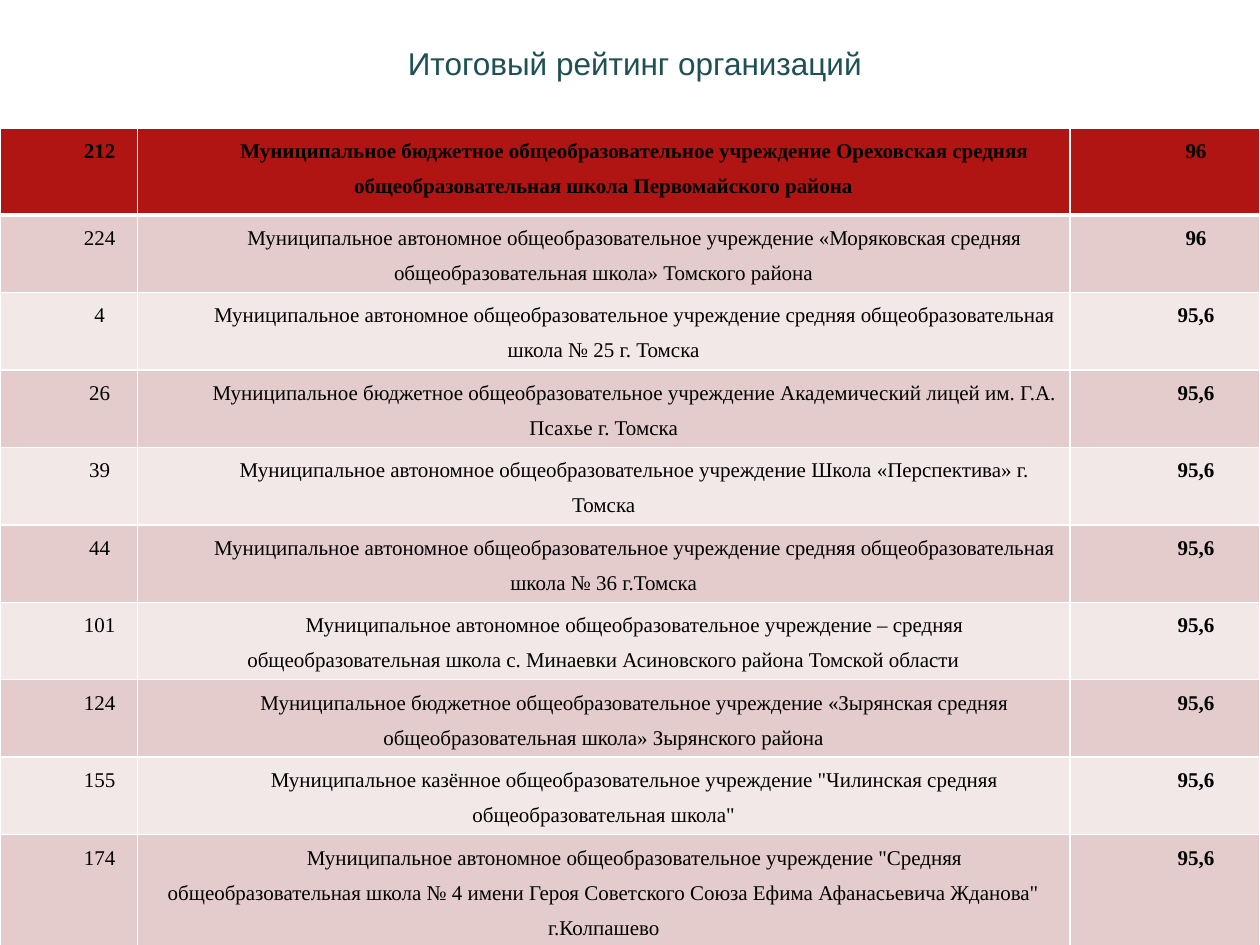
from dataclasses import dataclass

from lxml.etree import SubElement
from pptx import Presentation
from pptx.dml.color import RGBColor
from pptx.enum.text import MSO_ANCHOR, MSO_AUTO_SIZE, PP_ALIGN
from pptx.oxml.ns import qn
from pptx.util import Pt


@dataclass(frozen=True)
class Theme:
    title: str = "1E5155"
    text: str = "000000"
    header: str = "B01513"
    bands: tuple = ("E4CCCC", "F2E8E7")
    border: str = "FFFFFF"
    title_font: str = "Arial"
    table_font: str = "Times New Roman"
    title_size: float = 18
    table_size: float = 12


@dataclass(frozen=True)
class School:
    number: str
    name: str
    score: str = "95,6"
    height: float = 44.3


THEME = Theme()
COLUMN_WIDTHS = (78.5, 533, 108.5)
SCHOOLS = (
    School("212", "Муниципальное бюджетное общеобразовательное учреждение Ореховская средняя "
           "общеобразовательная школа Первомайского района", "96", 49.4),
    School("224", "Муниципальное автономное общеобразовательное учреждение «Моряковская средняя "
           "общеобразовательная школа» Томского района", "96"),
    School("4", "Муниципальное автономное общеобразовательное учреждение средняя "
           "общеобразовательная школа № 25 г. Томска"),
    School("26", "Муниципальное бюджетное общеобразовательное учреждение Академический лицей "
           "им. Г.А. Псахье г. Томска"),
    School("39", "Муниципальное автономное общеобразовательное учреждение Школа "
           "«Перспектива» г. Томска"),
    School("44", "Муниципальное автономное общеобразовательное учреждение средняя "
           "общеобразовательная школа № 36 г.Томска"),
    School("101", "Муниципальное автономное общеобразовательное учреждение – средняя "
           "общеобразовательная школа с. Минаевки Асиновского района Томской области"),
    School("124", "Муниципальное бюджетное общеобразовательное учреждение «Зырянская средняя "
           "общеобразовательная школа» Зырянского района"),
    School("155", "Муниципальное казённое общеобразовательное учреждение \"Чилинская средняя "
           "общеобразовательная школа\""),
    School("174", "Муниципальное автономное общеобразовательное учреждение \"Средняя "
           "общеобразовательная школа № 4 имени Героя Советского Союза Ефима Афанасьевича "
           "Жданова\" г.Колпашево", height=74),
)


def write(tf, text: str, *, font: str, size: float, color: str, bold: bool = False,
          spacing: float = 1, indent: float = 0) -> None:
    """Put one centred paragraph into a text frame."""
    p = tf.paragraphs[0]
    p.alignment = PP_ALIGN.CENTER
    p.line_spacing = spacing
    p.space_before = Pt(0)
    if indent:
        pPr = p._p.get_or_add_pPr()
        pPr.set("marL", "0")
        pPr.set("indent", str(Pt(indent)))
    r = p.add_run()
    r.text = text
    r.font.name = font
    r.font.size = Pt(size)
    r.font.bold = bold
    r.font.color.rgb = RGBColor.from_string(color)


def set_borders(cell, color: str, bottom: float) -> None:
    """Draw the four cell edges; borders come before the fill in the XML."""
    tcPr = cell._tc.get_or_add_tcPr()
    widths = {"a:lnL": 1, "a:lnR": 1, "a:lnT": 1, "a:lnB": bottom}
    for i, (tag, width) in enumerate(widths.items()):
        ln = SubElement(tcPr, qn(tag), w=str(Pt(width)))
        fill = SubElement(ln, qn("a:solidFill"))
        SubElement(fill, qn("a:srgbClr"), val=color)
        tcPr.insert(i, ln)


def add_title(s, text: str) -> None:
    sp = s.shapes.title
    sp.left, sp.top, sp.width, sp.height = Pt(36), Pt(21.6), Pt(648), Pt(90)
    tf = sp.text_frame
    tf.auto_size = MSO_AUTO_SIZE.NONE
    tf.vertical_anchor = MSO_ANCHOR.TOP
    tf.margin_left = Pt(12.8)
    write(tf, text, font=THEME.title_font, size=THEME.title_size, color=THEME.title)


def add_rating(s, schools: tuple) -> None:
    height = sum(school.height for school in schools)
    table = s.shapes.add_table(len(schools), len(COLUMN_WIDTHS), Pt(0), Pt(73.4),
                               Pt(sum(COLUMN_WIDTHS)), Pt(height)).table
    for column, width in zip(table.columns, COLUMN_WIDTHS):
        column.width = Pt(width)
    for i, school in enumerate(schools):
        table.rows[i].height = Pt(school.height)
        is_header = i == 0
        fill = THEME.header if is_header else THEME.bands[(i - 1) % 2]
        for j, text in enumerate((school.number, school.name, school.score)):
            cell = table.cell(i, j)
            cell.margin_left = cell.margin_right = Pt(5)
            cell.margin_top = cell.margin_bottom = Pt(0)
            cell.fill.solid()
            cell.fill.fore_color.rgb = RGBColor.from_string(fill)
            set_borders(cell, THEME.border, bottom=3 if is_header else 1)
            write(cell.text_frame, text, font=THEME.table_font, size=THEME.table_size,
                  color=THEME.text, bold=is_header or j == 2, spacing=1.5, indent=35.4)


def main() -> None:
    prs = Presentation()
    prs.slide_width, prs.slide_height = Pt(720), Pt(540)
    s = prs.slides.add_slide(prs.slide_layouts[5])  # Title Only
    add_title(s, "Итоговый рейтинг организаций")
    add_rating(s, SCHOOLS)
    prs.save("out.pptx")


if __name__ == "__main__":
    main()
